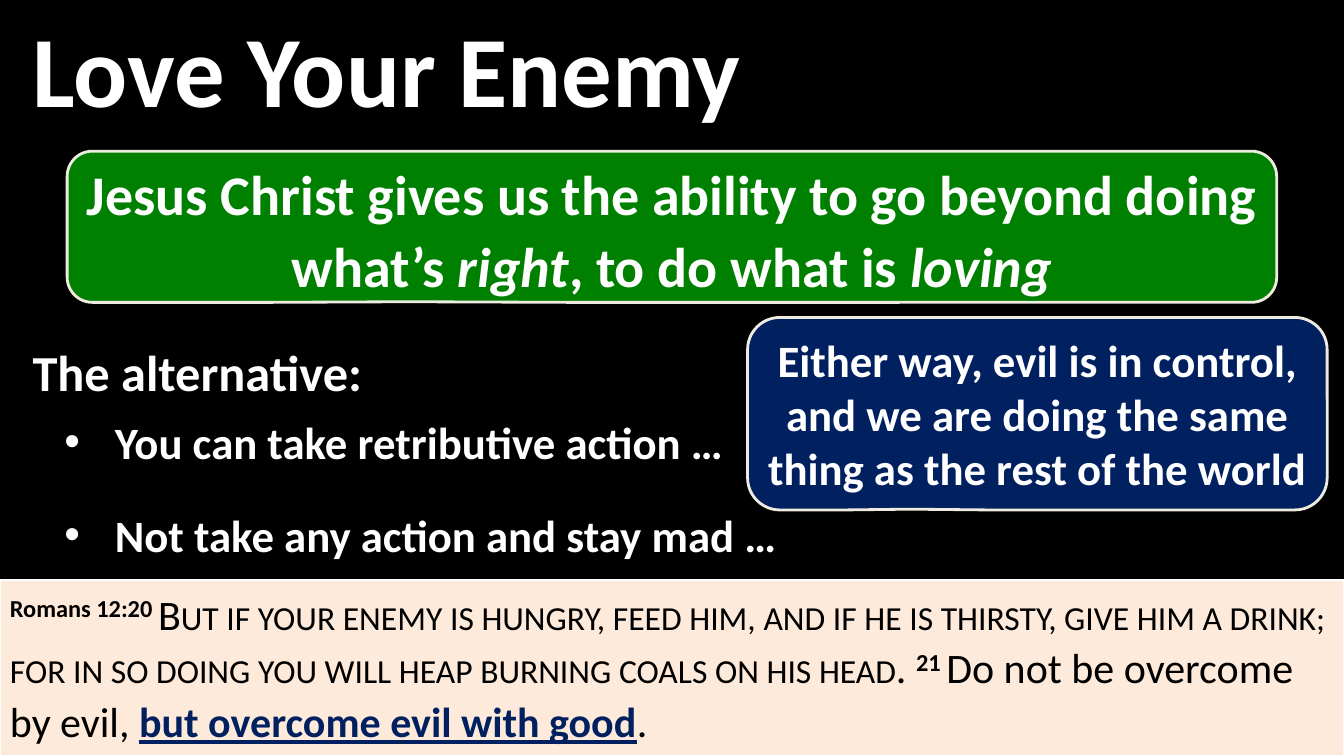
from dataclasses import dataclass

from lxml import etree
from pptx import Presentation
from pptx.dml.color import RGBColor
from pptx.enum import shapes, text
from pptx.oxml import ns
from pptx.util import Pt


@dataclass(frozen=True)
class Theme:
    font: str = "Calibri"
    black: str = "000000"
    white: str = "FFFFFF"
    green: str = "008000"
    navy: str = "002060"
    cream: str = "EEECE1"
    peach: str = "FDEADA"
    title: int = 72
    message: int = 40
    heading: int = 36
    point: int = 32
    verse: int = 30


THEME = Theme()


def paint(fill, color):
    fill.solid()
    fill.fore_color.rgb = RGBColor.from_string(color)


def style(font, size, color, bold=True):
    font.name = THEME.font
    font.size = Pt(size)
    font.bold = bold
    font.color.rgb = RGBColor.from_string(color)


def add_panel(slide, kind, box, fill, line, line_width):
    panel = slide.shapes.add_shape(kind, *(Pt(v) for v in box))
    panel.shadow.inherit = False
    paint(panel.fill, fill)
    panel.line.color.rgb = RGBColor.from_string(line)
    panel.line.width = Pt(line_width)
    panel.text_frame.word_wrap = True
    return panel


def fill_placeholder(holder, box, words, size, margin, align=text.PP_ALIGN.LEFT):
    """Place a one-line placeholder and return its paragraph."""
    holder.left, holder.top, holder.width, holder.height = (Pt(v) for v in box)
    frame = holder.text_frame
    frame.text = words
    frame.auto_size = text.MSO_AUTO_SIZE.NONE
    frame.vertical_anchor = text.MSO_ANCHOR.MIDDLE
    frame.margin_left = Pt(margin)
    line = frame.paragraphs[0]
    line.alignment = align
    line.space_before = Pt(0)
    style(line.font, size, THEME.white)
    return line


def add_title(slide, box, words):
    title = slide.shapes.title
    fill_placeholder(title, box, words, THEME.title, 23.25)
    paint(title.fill, THEME.black)
    shade = title.fill._xPr.find(".//" + ns.qn("a:srgbClr"))
    etree.SubElement(shade, ns.qn("a:alpha")).set("val", "64000")


def add_callout(slide, box, fill, size, phrases, spacing=1.0):
    """Centre (words, italic) phrases in a rounded callout."""
    callout = add_panel(slide, shapes.MSO_SHAPE.ROUNDED_RECTANGULAR_CALLOUT,
                        box, fill, THEME.cream, 2)
    for index, value in enumerate((-0.219, 0.496, 0.167)):
        callout.adjustments[index] = value
    statement = callout.text_frame.paragraphs[0]
    statement.alignment = text.PP_ALIGN.CENTER
    statement.line_spacing = spacing
    style(statement.font, size, THEME.white)
    for words, italic in phrases:
        phrase = statement.add_run()
        phrase.text = words
        phrase.font.italic = italic


def set_bullet(paragraph, indent, mark):
    props = paragraph._p.get_or_add_pPr()
    props.set("marL", str(Pt(indent)))
    props.set("indent", str(Pt(-indent)))
    etree.SubElement(props, ns.qn("a:buFont")).set("typeface", "Arial")
    etree.SubElement(props, ns.qn("a:buChar")).set("char", mark)


def add_alternatives(slide, box, heading, points):
    """Set a heading over evenly spaced bullet points."""
    left, top, width, _ = box
    lead, first, spare, second = list(slide.placeholders)[1:5]
    spare.element.getparent().remove(spare.element)
    fill_placeholder(lead, (left, top, 258, 68.5), heading, THEME.heading,
                     7.2, text.PP_ALIGN.CENTER)
    for index, (holder, words) in enumerate(zip((first, second), points)):
        row = (left + 24, top + 54.75 + 66.25 * index, width - 24, 59)
        point = fill_placeholder(holder, row, words, THEME.point, 10)
        set_bullet(point, 36, "•")


def add_scripture(slide, box, passages):
    """Set (words, kind) passages; kind is number, caps, plain or stress."""
    panel = add_panel(slide, shapes.MSO_SHAPE.RECTANGLE, box,
                      THEME.peach, THEME.white, 1.5)
    panel.text_frame.vertical_anchor = text.MSO_ANCHOR.TOP
    verse = panel.text_frame.paragraphs[0]
    verse.alignment = text.PP_ALIGN.LEFT
    verse.line_spacing = 1.07
    style(verse.font, THEME.verse, THEME.black, bold=False)
    for words, kind in passages:
        passage = verse.add_run()
        passage.text = words
        if kind == "number":
            passage.font.bold = True
            passage._r.get_or_add_rPr().set("baseline", "30000")
        elif kind == "caps":
            passage._r.get_or_add_rPr().set("cap", "small")
        elif kind == "stress":
            style(passage.font, THEME.verse, THEME.navy)
            passage.font.underline = True


def main():
    deck = Presentation()
    deck.slide_width, deck.slide_height = Pt(960), Pt(540)
    comparison = deck.slide_layouts[4]
    slide = deck.slides.add_slide(comparison)
    paint(slide.background.fill, THEME.black)

    add_title(slide, (0, 0, 960, 96), "Love Your Enemy")
    add_callout(slide, (48, 108, 864, 108), THEME.green, THEME.message, [
        ("Jesus Christ gives us the ability to go beyond doing what’s ", False),
        ("right", True),
        (", to do what is ", False),
        ("loving", True),
    ], spacing=1.07)
    add_scripture(slide, (0, 414, 960, 126), [
        ("Romans 12:20 ", "number"),
        ("But if your enemy is hungry, feed him, and if he is thirsty, "
         "give him a drink; for in so doing you will heap burning coals "
         "on his head", "caps"),
        (". ", "plain"),
        ("21 ", "number"),
        ("Do not be overcome by evil, ", "plain"),
        ("but overcome evil with good", "stress"),
        (".", "plain"),
    ])
    add_alternatives(slide, (12, 231, 565, 180), "The alternative:", [
        "You can take retributive action …",
        "Not take any action and stay mad …",
    ])
    add_callout(slide, (534, 226.75, 414, 137.5), THEME.navy, THEME.point, [
        ("Either way, evil is in control, and we are doing the same thing "
         "as the rest of the world", False),
    ])
    deck.save("out.pptx")


if __name__ == "__main__":
    main()
